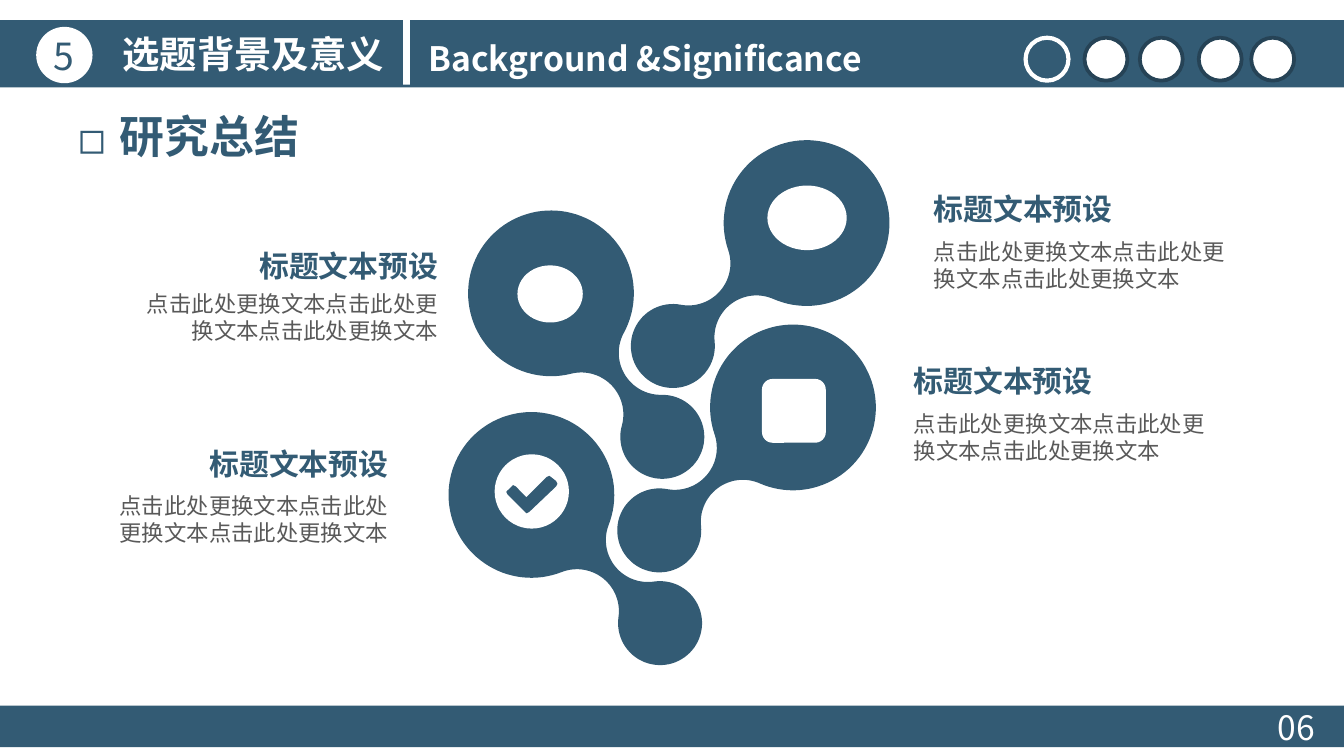
from math import atan2, cos, pi, sin, sqrt, radians

from pptx import Presentation
from pptx.dml.color import RGBColor
from pptx.enum.shapes import MSO_SHAPE as Preset
from pptx.enum.text import MSO_ANCHOR as Anchor, MSO_AUTO_SIZE as AutoSize, PP_ALIGN as Align
from pptx.oxml.ns import qn
from pptx.util import Pt

COLORS = {"main": "335B74", "ring": "264356", "grey": "595959", "white": "FFFFFF"}
FONT = "Noto Sans CJK SC"
BIG_R, SMALL_R, NECK_R, REACH = 44.4, 22.5, 22.5, 97.3
DETAIL = "点击此处更换文本点击此处更换文本点击此处更换文本"
TICK = [(-13, -0.7), (-10, -3.6), (-8.6, -2.9), (-2.9, 2.9), (7.9, -7.9), (9.4, -8.6),
        (13, -5.8), (13.7, -4.3), (13, -2.9), (-1.4, 10.8), (-2.9, 11.5), (-13, 1.4),
        (-13.7, 0)]


def rgb(color):
    return RGBColor.from_string(COLORS[color])


def arc(cx, cy, radius, start, end, steps=40):
    angles = [start + (end - start) * i / steps for i in range(steps + 1)]
    return [(cx + radius * cos(a), cy + radius * sin(a)) for a in angles]


def droplet_outline():
    """Two circles on the x axis joined by a neck of two arcs tangent to both."""
    to_big, to_small = BIG_R + NECK_R, SMALL_R + NECK_R
    neck_x = (REACH ** 2 + to_big ** 2 - to_small ** 2) / (2 * REACH)
    neck_y = sqrt(to_big ** 2 - neck_x ** 2)
    big_angle = atan2(neck_y, neck_x)
    small_angle = atan2(neck_y, neck_x - REACH)
    lower_neck = arc(neck_x, neck_y, NECK_R, big_angle + pi, small_angle + pi)
    upper_neck = [(x, -y) for x, y in reversed(lower_neck)]
    return (arc(0, 0, BIG_R, 2 * pi - big_angle, big_angle, 90) + lower_neck
            + arc(REACH, 0, SMALL_R, small_angle, -small_angle, 60) + upper_neck)


class Deck:
    def __init__(self, width, height):
        self.prs = Presentation()
        self.prs.slide_width, self.prs.slide_height = Pt(width), Pt(height)
        self.slide = self.prs.slides.add_slide(self.prs.slide_layouts[1])
        self.shapes = self.slide.shapes

    def paint(self, shape, fill=None, line=None, weight=2):
        shape.shadow.inherit = False
        if fill:
            shape.fill.solid()
            shape.fill.fore_color.rgb = rgb(fill)
        else:
            shape.fill.background()
        if line:
            shape.line.color.rgb = rgb(line)
            shape.line.width = Pt(weight)
        else:
            shape.line.fill.background()
        return shape

    def preset(self, kind, box, **look):
        return self.paint(self.shapes.add_shape(kind, *map(Pt, box)), **look)

    def outline(self, points, fill):
        corners = [(Pt(x), Pt(y)) for x, y in points]
        builder = self.shapes.build_freeform(*corners[0], scale=1.0)
        builder.add_line_segments(corners[1:], close=True)
        return self.paint(builder.convert_to_shape(), fill)

    def label(self, shape, words, size, color, bold=False, align=Align.LEFT,
              anchor=Anchor.TOP, wrap=True, insets=(7.2, 3.6)):
        frame = shape.text_frame
        side, end = map(Pt, insets)
        layout = {"word_wrap": wrap, "auto_size": AutoSize.NONE, "vertical_anchor": anchor,
                  "margin_left": side, "margin_right": side,
                  "margin_top": end, "margin_bottom": end}
        for key, value in layout.items():
            setattr(frame, key, value)
        paragraph = frame.paragraphs[0]
        paragraph.alignment = align
        paragraph.space_before = Pt(0)
        run = paragraph.add_run()
        run.text = words
        for key, value in {"name": FONT, "size": Pt(size), "bold": bold}.items():
            setattr(run.font, key, value)
        run.font.color.rgb = rgb(color)
        props = run._r.get_or_add_rPr()
        props.find(qn("a:latin")).addnext(props.makeelement(qn("a:ea"), {"typeface": FONT}))
        return paragraph

    def text(self, box, words, size, color, **style):
        return self.label(self.shapes.add_textbox(*map(Pt, box)), words, size, color, **style)

    def placeholder(self, index, box, words, size, color, **style):
        """Fill a template placeholder and bring it in front of what is drawn so far."""
        holder = self.slide.placeholders[index]
        for key, value in zip(("left", "top", "width", "height"), box):
            setattr(holder, key, Pt(value))
        self.shapes.element.append(holder.element)
        return self.label(holder, words, size, color, **style)

    def bullet(self, paragraph, mark, indent):
        props = paragraph._p.get_or_add_pPr()
        props.set("marL", str(Pt(indent)))
        props.set("indent", str(-Pt(indent)))
        for tag, attrs in (("a:buFont", {"typeface": FONT}), ("a:buChar", {"char": mark})):
            props.append(props.makeelement(qn(tag), attrs))

    def droplet(self, cx, cy, degrees):
        c, s = cos(radians(degrees)), sin(radians(degrees))
        self.outline([(cx + x * c - y * s, cy + x * s + y * c)
                      for x, y in droplet_outline()], "main")

    def caption(self, left, top, width, gap, align):
        style = {"align": align, "insets": (5.76, 0)}
        self.text((left, top, width, 14.4), "标题文本预设", 16, "main", bold=True, **style)
        self.text((left, top + gap, width, 34.6), DETAIL, 12, "grey",
                  anchor=Anchor.MIDDLE, **style)


def main():
    deck = Deck(720, 405)

    # Header
    deck.preset(Preset.RECTANGLE, (0, 10.8, 720, 36), fill="main")
    deck.preset(Preset.OVAL, (549.4, 20.2, 23, 23), line="white", weight=2.25)
    for left in (581, 610.6, 642.2, 670.3):
        deck.preset(Preset.OVAL, (left, 20.2, 23, 23), fill="white", line="ring")
    chapter = deck.preset(Preset.OVAL, (19.4, 14.4, 30.2, 30.2), fill="white")
    deck.label(chapter, "5", 20, "main", align=Align.CENTER, anchor=Anchor.MIDDLE,
               wrap=False, insets=(0, 0))
    deck.placeholder(0, (58.3, 13, 156.2, 31.7), "选题背景及意义", 20, "white",
                     bold=True, wrap=False)
    deck.text((222.5, 16.6, 256.3, 28.8), "Background &Significance", 18, "white",
              bold=True, wrap=False)
    deck.preset(Preset.RECTANGLE, (216, 10.8, 3.6, 34.6), fill="white")

    # Footer
    deck.preset(Preset.RECTANGLE, (0, 378, 720, 22.3), fill="main")
    deck.text((677.5, 375.1, 42.5, 28.8), "06", 18, "white")

    heading = deck.placeholder(1, (34.6, 54.7, 168.5, 36), "研究总结", 24, "main", bold=True)
    deck.bullet(heading, "◻", 22.3)

    for caption in ((72, 132.5, 168.5, 20.2, Align.RIGHT),
                    (494.6, 102.2, 170.6, 22.3, Align.LEFT),
                    (46.8, 239, 167, 21.6, Align.RIGHT),
                    (483.8, 194.4, 171.4, 22.3, Align.LEFT)):
        deck.caption(*caption)

    for droplet in ((424.8, 218.3, 137.4), (432.1, 119.5, 137.4),
                    (295.2, 157.2, 52.2), (284.7, 265.2, 44.9)):
        deck.droplet(*droplet)

    # Icons
    deck.preset(Preset.ROUNDED_RECTANGLE, (408.2, 203, 34.2, 34.2), fill="white")
    for badge in ((411.1, 99.4, 42.5, 34.6), (277.2, 142.2, 35, 30.6),
                  (265, 243.4, 39.8, 39.8)):
        deck.preset(Preset.OVAL, badge, fill="white")
    deck.outline([(284.9 + x, 263.5 + y) for x, y in TICK], "main")

    deck.prs.save("out.pptx")


if __name__ == "__main__":
    main()
